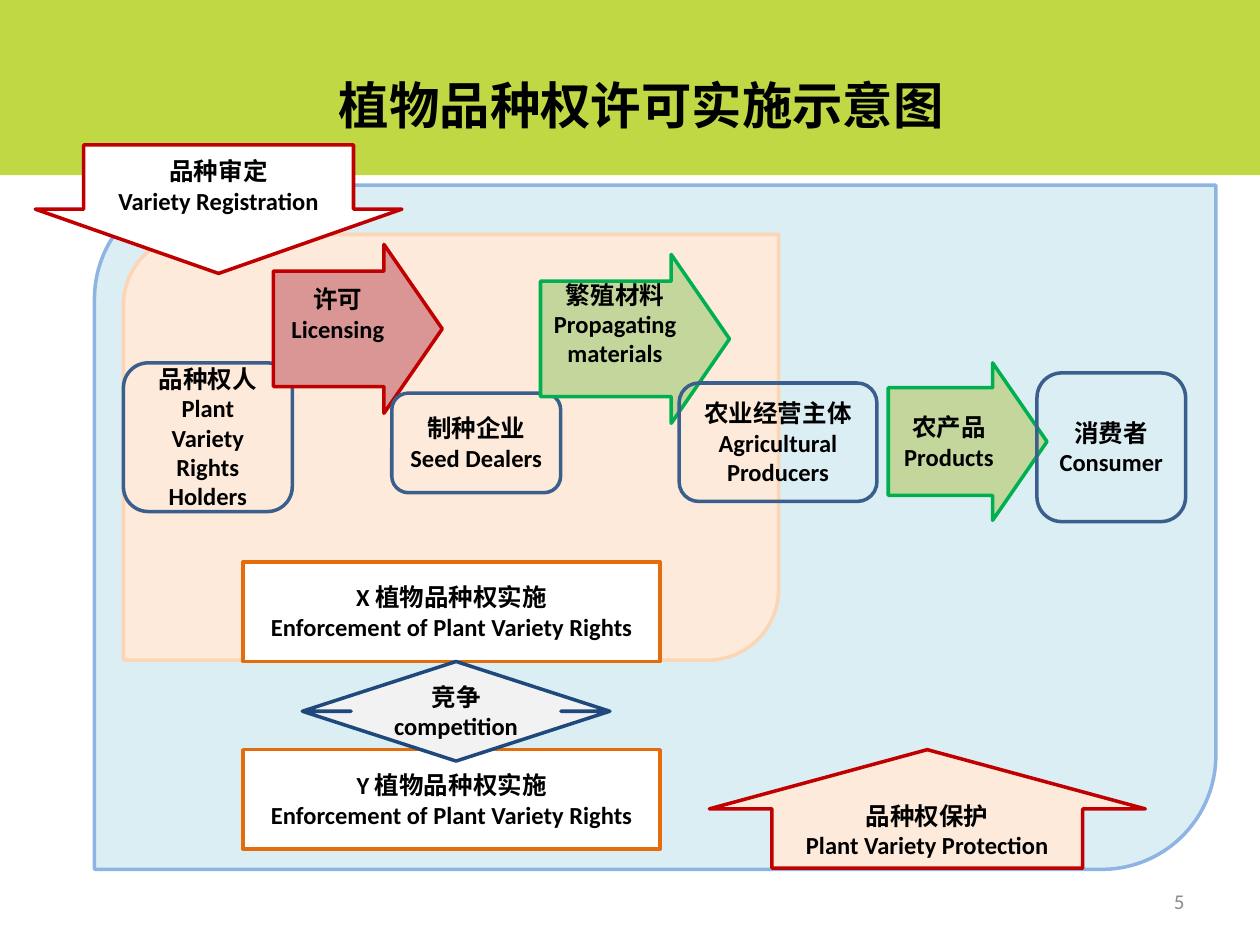
from pptx import Presentation
from pptx.dml.color import RGBColor
from pptx.enum.shapes import MSO_SHAPE as Shape
from pptx.enum.text import MSO_ANCHOR as Anchor, PP_ALIGN as Align
from pptx.util import Inches, Pt

FONT = "Calibri"
BLACK, WHITE, LIME = "000000", "FFFFFF", "BFD844"
PALE_BLUE, SKY, NAVY, STEEL = "DBEEF4", "8EB4E3", "1F497D", "3A5F8C"
PEACH, APRICOT, ORANGE = "FDEADA", "FCD5B5", "E46C0A"
ROSE, RED, SAGE, GREEN = "D99694", "C00000", "C3D69B", "00B050"
GREY, DIM = "F2F2F2", "8C8C8C"


def color(hex_code):
    return RGBColor.from_string(hex_code)


def write(frame, lines, size=14, ink=BLACK, bold=True, align=Align.CENTER):
    frame.word_wrap = True
    frame.vertical_anchor = Anchor.MIDDLE
    for i, line in enumerate(lines):
        paragraph = frame.paragraphs[0] if i == 0 else frame.add_paragraph()
        paragraph.alignment = align
        run = paragraph.add_run()
        run.text = line
        font = run.font
        font.name, font.size, font.bold = FONT, Pt(size), bold
        font.color.rgb = color(ink)


def add_label(slide, box, line, **style):
    label = slide.shapes.add_textbox(*map(Inches, box))
    write(label.text_frame, [line], **style)


def add_block(slide, kind, box, fill=None, outline=None, lines=(), adjust=(),
              lift=0):
    """Add a bordered shape; lift raises its text by widening the bottom inset."""
    block = slide.shapes.add_shape(kind, *map(Inches, box))
    block.shadow.inherit = False
    for i, value in enumerate(adjust):
        block.adjustments[i] = value
    if fill:
        block.fill.solid()
        block.fill.fore_color.rgb = color(fill)
    else:
        block.fill.background()
    if outline:
        block.line.color.rgb = color(outline)
        block.line.width = Pt(2)
    else:
        block.line.fill.background()
    if lines:
        write(block.text_frame, lines)
        block.text_frame.margin_bottom = Inches(0.05 + lift)


def add_header(slide, left, top, width, height):
    add_block(slide, Shape.RECTANGLE, (left, top, width, height), LIME)
    add_label(slide, (left + 0.59, top + 0.6, width - 1, 0.46),
              "植物品种权许可实施示意图", size=28.8)


def add_zones(slide, left, top, width, height):
    # Protection zone, with the licensing zone inside it
    zone = Shape.ROUND_2_DIAG_RECTANGLE
    add_block(slide, zone, (left, top, width, height), PALE_BLUE, SKY)
    add_block(slide, zone, (left + 0.23, top + 0.39, 5.2, 3.38), PEACH, APRICOT)


def add_supply_chain(slide, left, top):
    def party(x, y, width, height, *lines):
        add_block(slide, Shape.ROUNDED_RECTANGLE,
                  (left + x, top + y, width, height), None, STEEL, lines)

    def transfer(x, y, width, height, fill, outline, *lines, lift=0):
        add_block(slide, Shape.RIGHT_ARROW, (left + x, top + y, width, height),
                  fill, outline, lines, (0.684, 0.345), lift)

    # Each party is followed by what it passes on
    party(0, 0.94, 1.34, 1.18, "品种权人", "Plant Variety Rights Holders")
    transfer(1.19, 0, 1.34, 1.34, ROSE, RED, "许可", "Licensing", lift=0.24)
    party(2.13, 1.18, 1.34, 0.79, "制种企业", "Seed Dealers")
    transfer(3.31, 0.08, 1.5, 1.34, SAGE, GREEN,
             "繁殖材料", "Propagating materials", lift=0.24)
    party(4.41, 1.1, 1.57, 0.94, "农业经营主体", "Agricultural Producers")
    transfer(6.07, 0.94, 1.26, 1.25, SAGE, GREEN, "农产品", "Products")
    party(7.25, 1.02, 1.18, 1.18, "消费者", "Consumer")


def add_enforcement(slide, left, top, width, height):
    # Two rival holders, joined by the competition arrow
    card_height = 0.79
    for holder, y in (("X", top), ("Y", top + height - card_height)):
        add_block(slide, Shape.RECTANGLE, (left, y, width, card_height),
                  WHITE, ORANGE,
                  (f"{holder} 植物品种权实施", "Enforcement of Plant Variety Rights"))
    # This preset lists its head length before its shaft width
    add_block(slide, Shape.UP_DOWN_ARROW,
              (left + 0.47, top + card_height, 2.44, 0.79),
              GREY, NAVY, ("竞争", "competition"), (0.306, 0.682))


def add_registration(slide, *box):
    add_block(slide, Shape.DOWN_ARROW, box, WHITE, RED,
              ("品种审定", "Variety Registration"), (0.736, 0.5))


def add_protection(slide, *box):
    add_block(slide, Shape.UP_ARROW, box, PEACH, RED,
              ("品种权保护", "Plant Variety Protection"), (0.713, 0.5))


def main():
    deck = Presentation()
    deck.slide_width, deck.slide_height = Inches(10), Inches(7.5)
    slide = deck.slides.add_slide(deck.slide_layouts[6])

    add_header(slide, 0, 0, 10, 1.39)
    add_zones(slide, 0.75, 1.47, 8.9, 5.43)
    add_label(slide, (7.17, 6.95, 2.33, 0.4), "5", size=12, ink=DIM,
              bold=False, align=Align.RIGHT)
    add_supply_chain(slide, 0.98, 1.94)
    add_registration(slide, 0.28, 1.15, 2.91, 1.02)
    add_protection(slide, 5.63, 5.95, 3.46, 0.94)
    add_enforcement(slide, 1.93, 4.46, 3.31, 2.28)

    deck.save("out.pptx")


if __name__ == "__main__":
    main()
